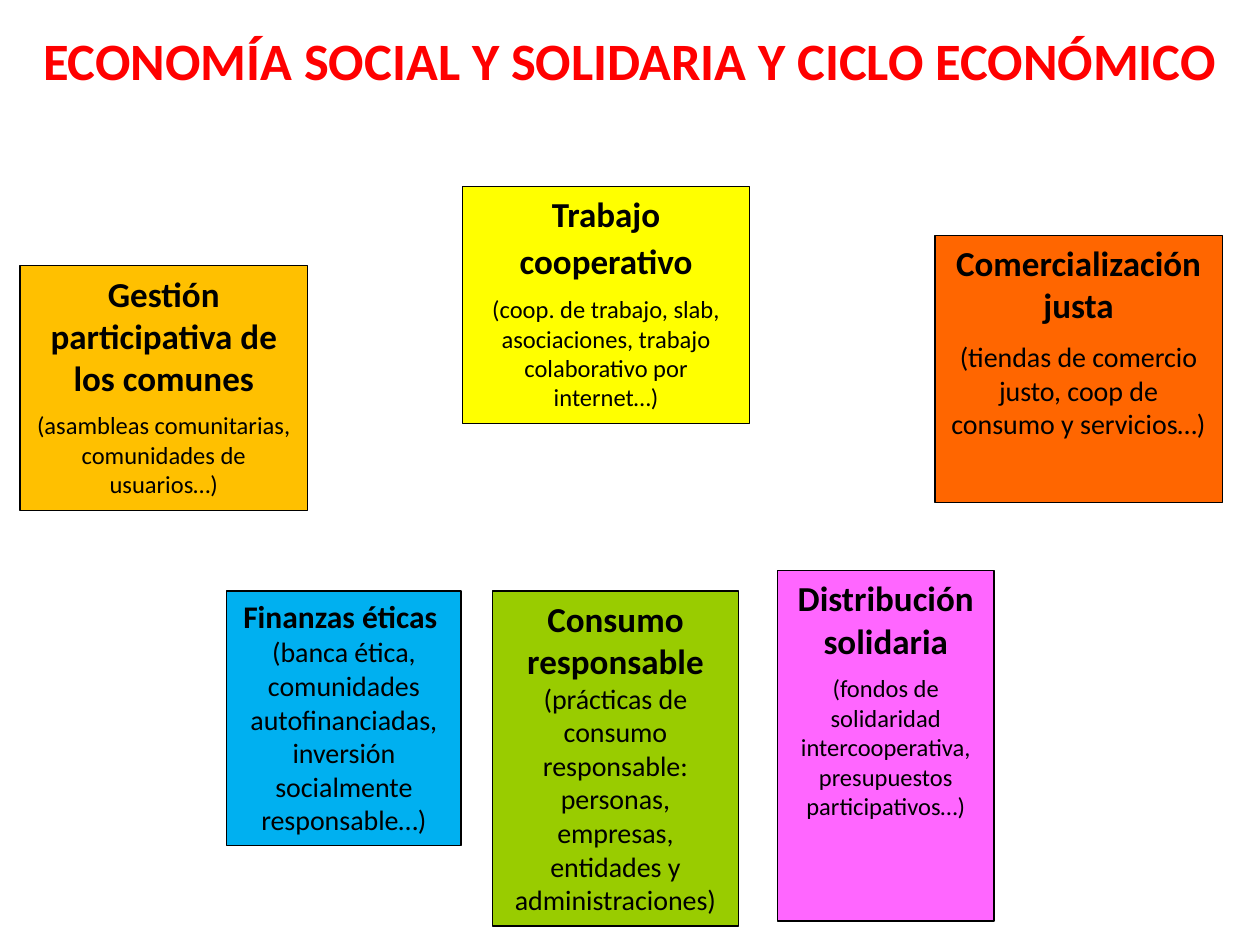
"""Build the slide on the social and solidarity economy and the economic cycle."""
from dataclasses import dataclass

from pptx import Presentation
from pptx.dml.color import RGBColor
from pptx.enum.shapes import MSO_SHAPE
from pptx.enum.text import MSO_ANCHOR, MSO_AUTO_SIZE, PP_ALIGN
from pptx.util import Inches, Pt


@dataclass(frozen=True)
class Theme:
    font: str = "Calibri"
    title: str = "FF0000"
    ink: str = "000000"
    yellow: str = "FFFF00"
    blue: str = "00B0F0"
    green: str = "99CC00"
    orange: str = "FF6600"
    amber: str = "FFC000"
    pink: str = "FF66FF"
    title_size: int = 30
    heading_size: int = 20
    small_heading_size: int = 18
    detail_size: int = 16
    small_detail_size: int = 14


theme = Theme()


def format_paragraph(para, size, color, bold, space_before=0):
    para.alignment = PP_ALIGN.CENTER
    para.space_before = Pt(space_before)
    for span in para.runs:
        span.font.name = theme.font
        span.font.size = Pt(size)
        span.font.bold = bold
        span.font.color.rgb = RGBColor.from_string(color)


deck = Presentation()
deck.slide_width = Inches(10)
deck.slide_height = Inches(7.5)
page = deck.slides.add_slide(deck.slide_layouts[5])

title = page.shapes.title
title.left, title.top = Inches(0), Inches(0.31)
title.width, title.height = Inches(10), Inches(0.32)
title.text_frame.text = "ECONOMÍA SOCIAL Y SOLIDARIA Y CICLO ECONÓMICO"
title.text_frame.vertical_anchor = MSO_ANCHOR.MIDDLE
title.text_frame.auto_size = MSO_AUTO_SIZE.NONE
format_paragraph(title.text_frame.paragraphs[0], theme.title_size, theme.title, True)

big, medium = theme.heading_size, theme.small_heading_size
normal, small = theme.detail_size, theme.small_detail_size
stages = [
    (3.67, 1.48, 2.28, 1.88, theme.yellow, big, small, 7, ["Trabajo", "cooperativo"],
     "(coop. de trabajo, slab, asociaciones, trabajo colaborativo por internet…)"),
    (1.8, 4.69, 1.86, 2.02, theme.blue, medium, normal, 0, ["Finanzas éticas "],
     "(banca ética, comunidades autofinanciadas, inversión socialmente responsable…)"),
    (3.91, 4.69, 1.95, 2.66, theme.green, big, normal, 0, ["Consumo responsable"],
     "(prácticas de consumo responsable: personas, empresas, entidades y administraciones)"),
    (7.42, 1.87, 2.28, 2.12, theme.orange, big, normal, 8, ["Comercialización justa"],
     "(tiendas de comercio justo, coop de consumo y servicios…)"),
    (0.16, 2.11, 2.28, 1.94, theme.amber, big, small, 7,
     ["Gestión participativa de los comunes"],
     "(asambleas comunitarias, comunidades de usuarios…)"),
    (6.17, 4.53, 1.72, 2.78, theme.pink, big, small, 7, ["Distribución solidaria"],
     "(fondos de solidaridad intercooperativa, presupuestos participativos…)"),
]

for left, top, width, height, color, heading_size, detail_size, gap, headings, detail in stages:
    box = page.shapes.add_shape(
        MSO_SHAPE.RECTANGLE, Inches(left), Inches(top), Inches(width), Inches(height)
    )
    box.shadow.inherit = False
    box.fill.solid()
    box.fill.fore_color.rgb = RGBColor.from_string(color)
    box.line.color.rgb = RGBColor.from_string(theme.ink)
    box.line.width = Pt(0.75)
    frame = box.text_frame
    frame.word_wrap = True
    frame.auto_size = MSO_AUTO_SIZE.SHAPE_TO_FIT_TEXT
    frame.vertical_anchor = MSO_ANCHOR.TOP
    frame.text = "\n".join([*headings, detail])
    *heading_paras, detail_para = frame.paragraphs
    for para in heading_paras:
        format_paragraph(para, heading_size, theme.ink, True, 3 if len(headings) > 1 else 0)
    format_paragraph(detail_para, detail_size, theme.ink, False, gap)

deck.save("out.pptx")
